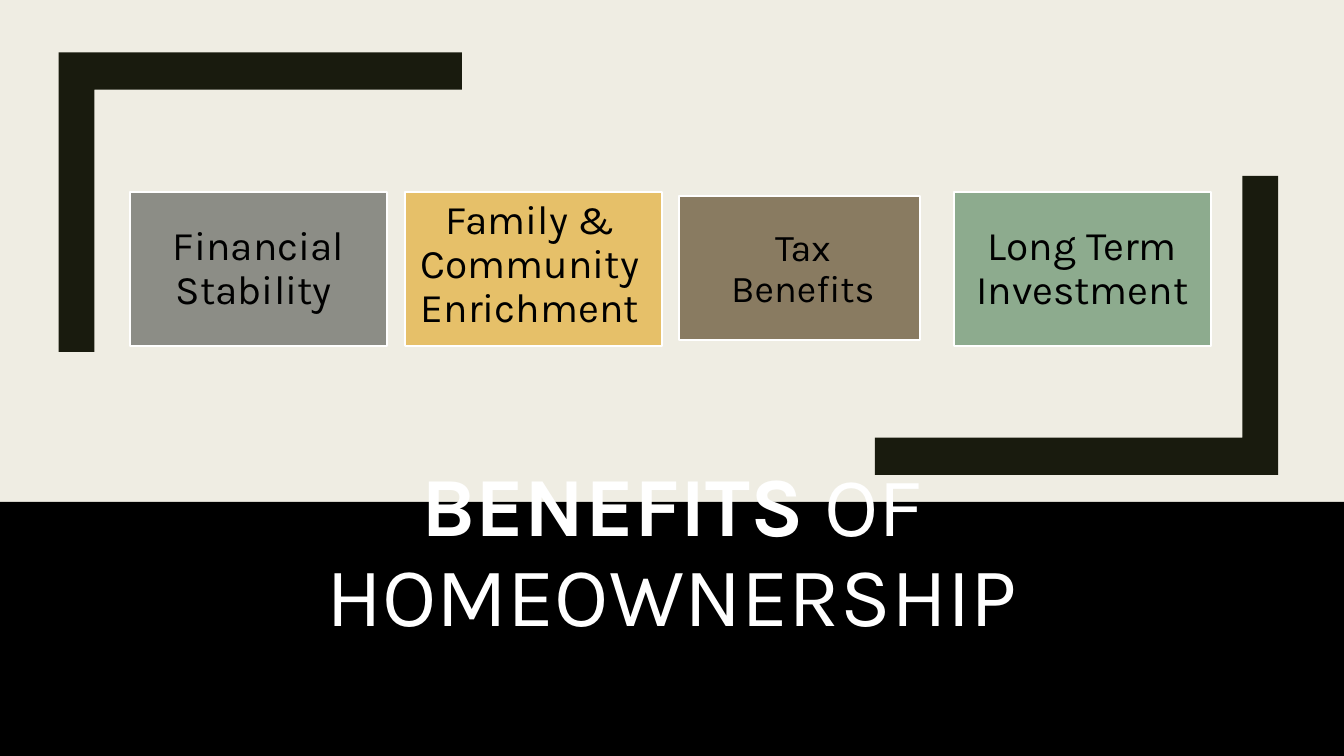
from dataclasses import dataclass

from pptx import Presentation
from pptx.dml.color import RGBColor
from pptx.enum.shapes import MSO_SHAPE
from pptx.enum.text import MSO_ANCHOR, PP_ALIGN
from pptx.util import Cm, Pt


@dataclass(frozen=True)
class Theme:
    """Colours, font and type sizes of the slide."""
    paper: RGBColor = RGBColor.from_string("EFEDE3")
    bracket: RGBColor = RGBColor.from_string("191B0E")
    black: RGBColor = RGBColor.from_string("000000")
    white: RGBColor = RGBColor.from_string("FFFFFF")
    grey: RGBColor = RGBColor.from_string("8C8D86")
    gold: RGBColor = RGBColor.from_string("E6C069")
    brown: RGBColor = RGBColor.from_string("897B61")
    green: RGBColor = RGBColor.from_string("8DAB8E")
    font: str = "Karla"
    title: float = 60
    label: float = 29
    small_label: float = 27


THEME = Theme()
WIDTH, HEIGHT = 33.87, 19.05
CARD_WIDTH, CARD_HEIGHT, CARD_PITCH, CARD_PADDING = 6.48, 3.88, 6.92, 0.46
FULL, SMALL = (0, 0, CARD_WIDTH, CARD_HEIGHT), (0, 0.1, 6.07, 3.63)
BENEFITS = [
    ("Financial Stability ", THEME.grey, THEME.label, FULL, (0, 0)),
    ("Family & Community Enrichment", THEME.gold, THEME.label, FULL, (-0.08, -0.1)),
    ("Tax Benefits", THEME.brown, THEME.small_label, SMALL, (0.08, 0.03)),
    ("Long Term Investment", THEME.green, THEME.label, FULL, (0, 0)),
]


def apply(target, formats):
    """Set each named format value on the target."""
    for name, value in formats.items():
        setattr(target, name, value)


def paint(shape, fill, line=None):
    """Give a shape a flat fill and an optional outline."""
    shape.shadow.inherit = False
    shape.fill.solid()
    shape.fill.fore_color.rgb = fill
    if line is None:
        shape.line.fill.background()
    else:
        shape.line.color.rgb = line
        shape.line.width = Pt(1.5)


def add_bracket(slide, left, top, width, height, flip=False):
    """Draw a corner bracket, turned to the opposite corner when flipped."""
    across, down = 0.9, 0.94
    outline = [(0, 0), (width, 0), (width, down), (across, down),
               (across, height), (0, height)]
    if flip:
        outline = [(width - x, height - y) for x, y in outline]
    points = [(Cm(left + x), Cm(top + y)) for x, y in outline]
    builder = slide.shapes.build_freeform(*points[0])
    builder.add_line_segments(points[1:])
    paint(builder.convert_to_shape(), THEME.bracket)


def add_title(slide, left, top, width, height):
    """Place the title, its first word in bold."""
    frame = slide.shapes.add_textbox(*map(Cm, (left, top, width, height))).text_frame
    apply(frame, {"word_wrap": True, "vertical_anchor": MSO_ANCHOR.BOTTOM})
    heading = frame.paragraphs[0]
    apply(heading, {"alignment": PP_ALIGN.CENTER, "line_spacing": 0.89})
    for words, bold in (("BENEFITS", True), (" OF HOMEOWNERSHIP", False)):
        run = heading.add_run()
        run.text = words
        apply(run.font, {"name": THEME.font, "size": Pt(THEME.title), "bold": bold})
        run.font.color.rgb = THEME.white


def add_card(slide, left, top, width, height, benefit, fill, size, shift):
    """Place one benefit card with its label shifted from the centre."""
    card = slide.shapes.add_shape(
        MSO_SHAPE.RECTANGLE, *map(Cm, (left, top, width, height)))
    paint(card, fill, THEME.white)
    right, down = shift
    apply(card.text_frame, {
        "word_wrap": True,
        "vertical_anchor": MSO_ANCHOR.MIDDLE,
        "margin_left": Cm(CARD_PADDING + right),
        "margin_right": Cm(CARD_PADDING - right),
        "margin_top": Cm(CARD_PADDING + down),
        "margin_bottom": Cm(CARD_PADDING - down),
    })
    label = card.text_frame.paragraphs[0]
    label.text = benefit
    apply(label, {"alignment": PP_ALIGN.CENTER, "line_spacing": 0.9})
    apply(label.font, {"name": THEME.font, "size": Pt(size)})
    label.font.color.rgb = THEME.black


def add_benefits(slide, left, top):
    """Lay the benefit cards out in an even row."""
    for column, (benefit, fill, size, box, shift) in enumerate(BENEFITS):
        x, y, width, height = box
        add_card(slide, left + column * CARD_PITCH + x, top + y, width, height,
                 benefit, fill, size, shift)


def add_title_band(slide, left, top, width, height):
    """Draw the black band and the title that rises out of it."""
    band = slide.shapes.add_shape(
        MSO_SHAPE.RECTANGLE, *map(Cm, (left, top, width, height)))
    paint(band, THEME.black)
    add_title(slide, left + 1.83, top + 0.81, width - 3.67, 2.9)


def main():
    """Build and save the slide."""
    deck = Presentation()
    apply(deck, {"slide_width": Cm(WIDTH), "slide_height": Cm(HEIGHT)})
    slide = deck.slides.add_slide(deck.slide_layouts[6])
    slide.background.fill.solid()
    slide.background.fill.fore_color.rgb = THEME.paper
    add_bracket(slide, 1.48, 1.32, 10.16, 7.55)
    add_title_band(slide, 0, 12.65, WIDTH, HEIGHT - 12.65)
    add_bracket(slide, 22.05, 4.43, 10.16, 7.54, flip=True)
    add_benefits(slide, 3.28, 4.85)
    deck.save("out.pptx")


if __name__ == "__main__":
    main()
